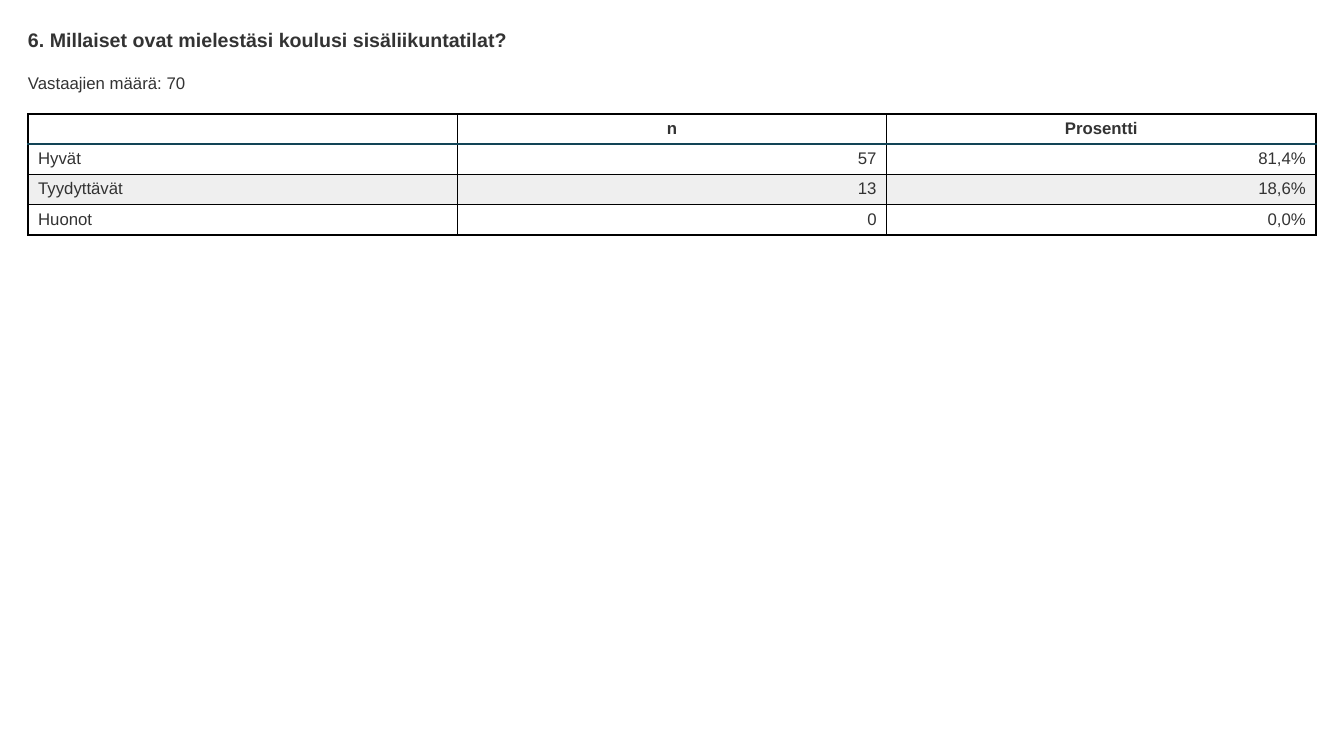
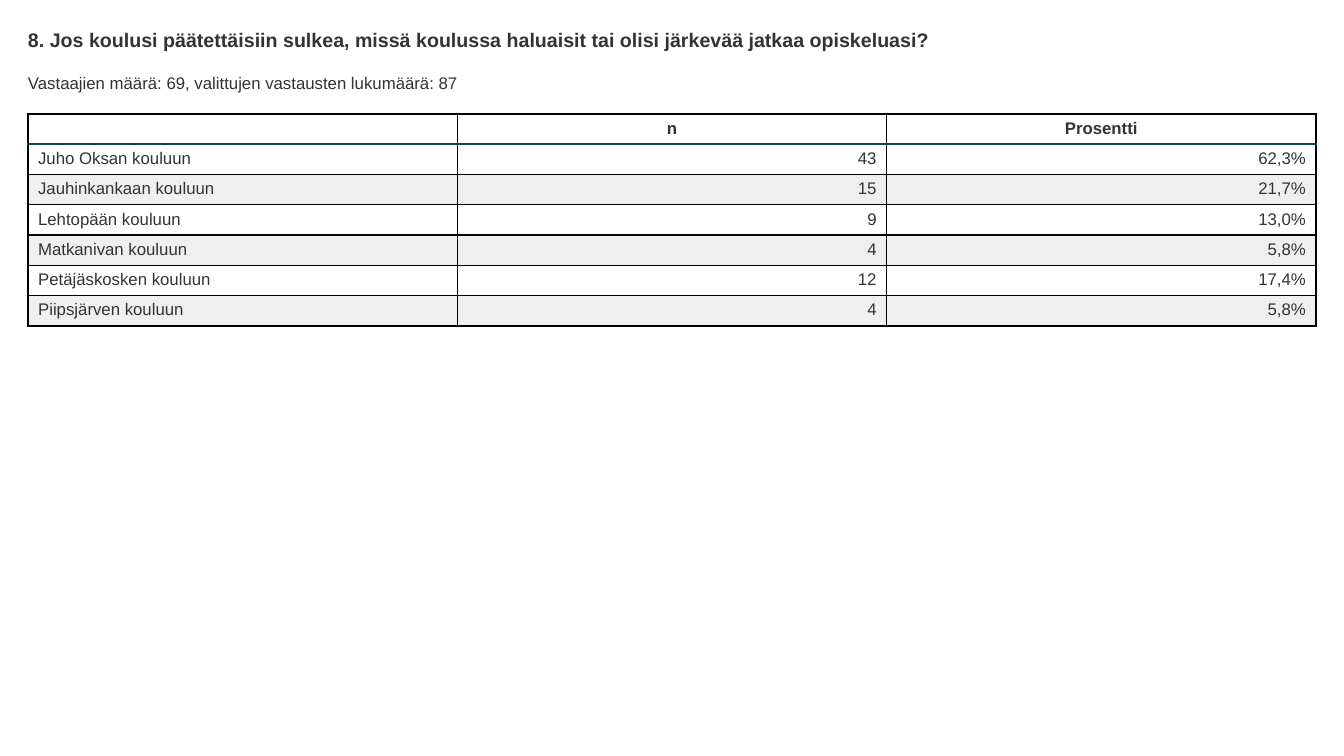
"""Build two survey result slides, each with a question, a count and a table."""
from lxml import etree
from pptx import Presentation
from pptx.dml.color import RGBColor
from pptx.enum.text import MSO_AUTO_SIZE, PP_ALIGN
from pptx.oxml.ns import qn
from pptx.util import Pt

LEFT, CENTER, RIGHT = PP_ALIGN.LEFT, PP_ALIGN.CENTER, PP_ALIGN.RIGHT
FIT_SHAPE = MSO_AUTO_SIZE.SHAPE_TO_FIT_TEXT

HEADER = ("", "n", "Prosentti")
QUESTIONS = [
    {
        "title": "6. Millaiset ovat mielestäsi koulusi sisäliikuntatilat?",
        "respondents": "Vastaajien määrä: 70",
        "answers": [
            ("Hyvät", "57", "81,4%"),
            ("Tyydyttävät", "13", "18,6%"),
            ("Huonot", "0", "0,0%"),
        ],
    },
    {
        "title": "8. Jos koulusi päätettäisiin sulkea, missä koulussa haluaisit "
                 "tai olisi järkevää jatkaa opiskeluasi?",
        "respondents": "Vastaajien määrä: 69, valittujen vastausten lukumäärä: 87",
        "answers": [
            ("Juho Oksan kouluun", "43", "62,3%"),
            ("Jauhinkankaan kouluun", "15", "21,7%"),
            ("Lehtopään kouluun", "9", "13,0%"),
            ("Matkanivan kouluun", "4", "5,8%"),
            ("Petäjäskosken kouluun", "12", "17,4%"),
            ("Piipsjärven kouluun", "4", "5,8%"),
        ],
    },
]

FONT = "Arial"
TEXT, BAND, GRID, HEADER_RULE = "333333", "EFEFEF", "000000", "124456"
TITLE_SIZE, BODY_SIZE = 14, 12
SLIDE_WIDTH, SLIDE_HEIGHT, MARGIN = 960, 540, 20
CONTENT_WIDTH = SLIDE_WIDTH - 2 * MARGIN
TITLE_TOP, RESPONDENTS_TOP, TABLE_TOP = 20, 52, 81.4
ROW_HEIGHT = 21.6


def color(value):
    return RGBColor.from_string(value)


def style_paragraph(paragraph, size, bold=False, alignment=LEFT):
    paragraph.alignment = alignment
    font = paragraph.font
    font.name, font.size, font.bold = FONT, Pt(size), bold
    font.color.rgb = color(TEXT)
    if not paragraph.runs:
        etree.SubElement(paragraph._p, qn("a:endParaRPr"), sz=str(size * 100))


def add_line(slide, text, top, size, bold=False):
    box = slide.shapes.add_textbox(
        Pt(MARGIN), Pt(top), Pt(CONTENT_WIDTH), Pt(size * 1.2))
    frame = box.text_frame
    frame.margin_left = frame.margin_right = 0
    frame.margin_top = frame.margin_bottom = 0
    frame.word_wrap = True
    frame.auto_size = FIT_SHAPE
    frame.text = text
    style_paragraph(frame.paragraphs[0], size, bold)


def set_borders(cell, row):
    properties = cell._tc.get_or_add_tcPr()
    for side in ("L", "R", "T", "B"):
        under_header = (row, side) in ((0, "B"), (1, "T"))
        line = etree.SubElement(
            properties, qn(f"a:ln{side}"), w=str(Pt(2 if under_header else 1)))
        fill = etree.SubElement(line, qn("a:solidFill"))
        etree.SubElement(fill, qn("a:srgbClr"),
                         val=HEADER_RULE if under_header else GRID)


def add_answer_table(slide, answers):
    rows = [HEADER, *answers]
    table = slide.shapes.add_table(
        len(rows), len(HEADER), Pt(MARGIN), Pt(TABLE_TOP),
        Pt(CONTENT_WIDTH), Pt(ROW_HEIGHT * len(rows))).table
    table.horz_banding = False
    for row, values in enumerate(rows):
        table.rows[row].height = Pt(ROW_HEIGHT)
        for column, value in enumerate(values):
            cell = table.cell(row, column)
            cell.text = value
            is_header = row == 0
            alignment = CENTER if is_header else RIGHT if column else LEFT
            style_paragraph(cell.text_frame.paragraphs[0], BODY_SIZE,
                            is_header, alignment)
            set_borders(cell, row)
            if row and row % 2 == 0:
                cell.fill.solid()
                cell.fill.fore_color.rgb = color(BAND)
            else:
                cell.fill.background()


def main():
    presentation = Presentation()
    presentation.slide_width = Pt(SLIDE_WIDTH)
    presentation.slide_height = Pt(SLIDE_HEIGHT)
    blank = presentation.slide_layouts[6]
    for question in QUESTIONS:
        slide = presentation.slides.add_slide(blank)
        add_line(slide, question["title"], TITLE_TOP, TITLE_SIZE, bold=True)
        add_line(slide, question["respondents"], RESPONDENTS_TOP, BODY_SIZE)
        add_answer_table(slide, question["answers"])
    presentation.save("out.pptx")


if __name__ == "__main__":
    main()
